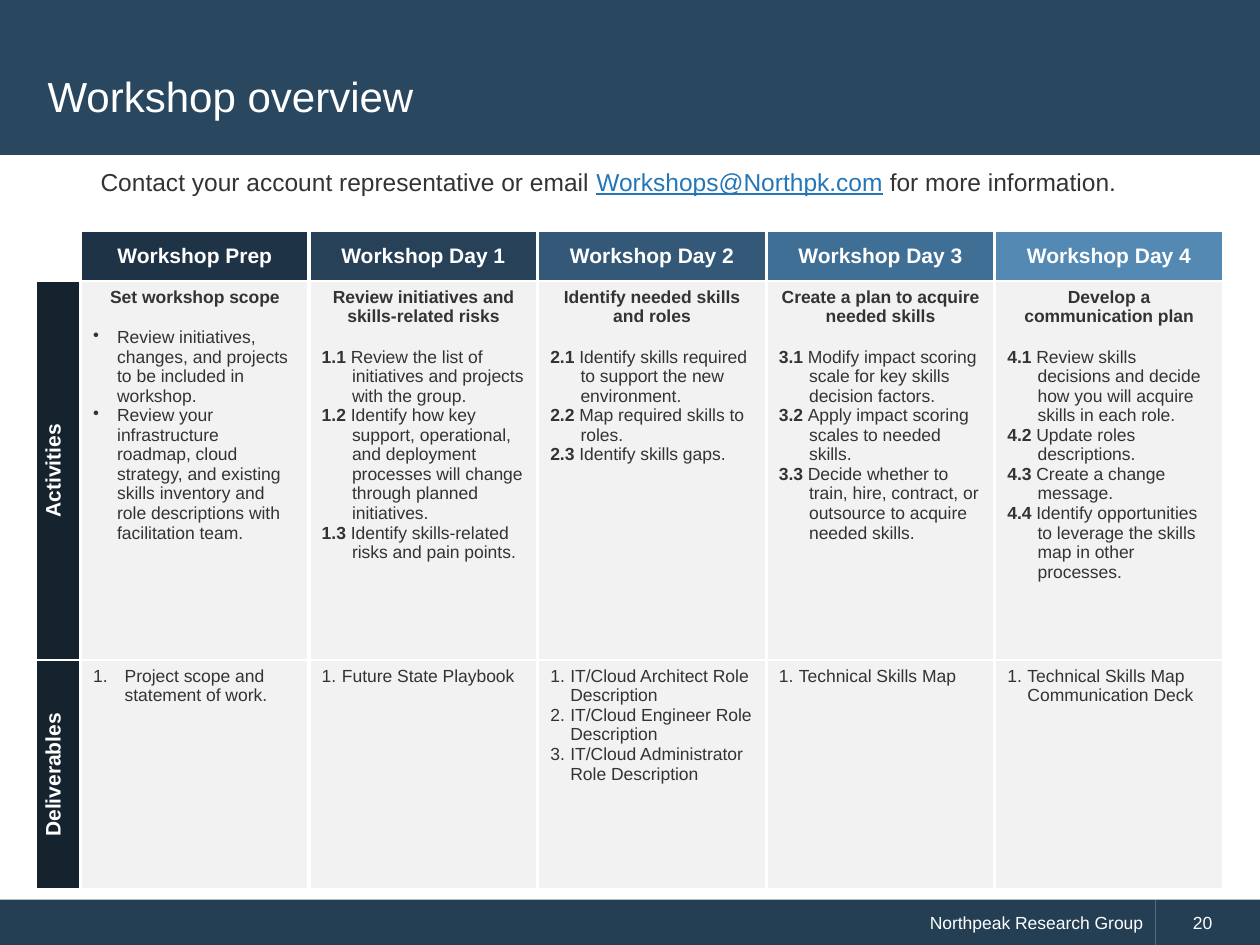
from collections import namedtuple
from dataclasses import dataclass

from lxml.etree import SubElement
from pptx import Presentation
from pptx.dml.color import RGBColor
from pptx.enum.shapes import MSO_SHAPE
from pptx.enum.text import MSO_ANCHOR, PP_ALIGN
from pptx.oxml.ns import qn
from pptx.util import Inches, Pt

Box = namedtuple("Box", "left top width height")


@dataclass(frozen=True)
class Theme:
    font: str = "Arial"
    white: str = "FFFFFF"
    ink: str = "333333"
    link: str = "2576B7"
    banner: str = "29475F"
    footer: str = "243F54"
    side: str = "15232F"
    body: str = "F2F2F2"
    days: tuple = ("1E3346", "264158", "345978", "406F96", "5489B4")
    title_size: int = 24
    contact_size: int = 14
    head_size: int = 12
    body_size: int = 10


THEME = Theme()
HEADING = {"size": Pt(THEME.head_size), "bold": True}

# Each stage: name, goal, activities (number, text), deliverables
STAGES = [
    ("Workshop Prep", "Set workshop scope", [
        ("", "Review initiatives, changes, and projects to be included in workshop."),
        ("", "Review your infrastructure roadmap, cloud strategy, and existing skills "
             "inventory and role descriptions with facilitation team.")],
     ["Project scope and statement of work."]),
    ("Workshop Day 1", "Review initiatives and skills-related risks", [
        ("1.1", "Review the list of initiatives and projects with the group."),
        ("1.2", "Identify how key support, operational, and deployment processes "
                "will change through planned initiatives."),
        ("1.3", "Identify skills-related risks and pain points.")],
     ["Future State Playbook"]),
    ("Workshop Day 2", "Identify needed skills and roles", [
        ("2.1", "Identify skills required to support the new environment."),
        ("2.2", "Map required skills to roles."),
        ("2.3", "Identify skills gaps.")],
     ["IT/Cloud Architect Role Description", "IT/Cloud Engineer Role Description",
      "IT/Cloud Administrator Role Description"]),
    ("Workshop Day 3", "Create a plan to acquire needed skills", [
        ("3.1", "Modify impact scoring scale for key skills decision factors."),
        ("3.2", "Apply impact scoring scales to needed skills."),
        ("3.3", "Decide whether to train, hire, contract, or outsource to acquire "
                "needed skills.")],
     ["Technical Skills Map"]),
    ("Workshop Day 4", "Develop a communication plan", [
        ("4.1", "Review skills decisions and decide how you will acquire skills in each role."),
        ("4.2", "Update roles descriptions."),
        ("4.3", "Create a change message."),
        ("4.4", "Identify opportunities to leverage the skills map in other processes.")],
     ["Technical Skills Map Communication Deck"]),
]


def add_run(paragraph, text, color=THEME.ink, **formats):
    run = paragraph.add_run()
    run.text = text
    run.font.color.rgb = RGBColor.from_string(color)
    defaults = {"name": THEME.font, "size": Pt(THEME.body_size), "bold": False}
    for attribute, value in {**defaults, **formats}.items():
        setattr(run.font, attribute, value)


def add_paragraph(frame, **formats):
    first = frame.paragraphs[0]
    paragraph = frame.add_paragraph() if first.runs else first
    for attribute, value in formats.items():
        setattr(paragraph, attribute, value)
    return paragraph


def indent(paragraph, left, hanging=0, bullet=None, **bullet_format):
    properties = paragraph._p.get_or_add_pPr()
    properties.set("marL", str(Inches(left)))
    properties.set("indent", str(-Inches(hanging)))
    if bullet:
        SubElement(properties, qn(bullet), **bullet_format)


def add_bar(slide, box, color):
    bar = slide.shapes.add_shape(MSO_SHAPE.RECTANGLE, *map(Inches, box))
    bar.shadow.inherit = False
    bar.fill.solid()
    bar.fill.fore_color.rgb = RGBColor.from_string(color)
    bar.line.fill.background()
    bar.text_frame.vertical_anchor = MSO_ANCHOR.MIDDLE
    return bar


def add_text(slide, box):
    frame = slide.shapes.add_textbox(*map(Inches, box)).text_frame
    frame.word_wrap = True
    frame.vertical_anchor = MSO_ANCHOR.MIDDLE
    return add_paragraph(frame)


def add_footer(slide, box):
    number_width = 0.83
    split = box.width - number_width
    owner = add_bar(slide, box._replace(width=split), THEME.footer)
    paragraph = add_paragraph(owner.text_frame, alignment=PP_ALIGN.RIGHT)
    add_run(paragraph, "Northpeak Research Group", THEME.white)
    number = add_bar(slide, box._replace(left=box.left + split, width=number_width),
                     THEME.footer)
    paragraph = add_paragraph(number.text_frame, alignment=PP_ALIGN.LEFT)
    indent(paragraph, 0.2)
    add_run(paragraph, "20", THEME.white)


def add_banner(slide, box):
    add_bar(slide, box, THEME.banner)
    title = add_text(slide, Box(box.left + 0.28, box.top + 0.28, 9.43, 0.96))
    add_run(title, "Workshop overview", THEME.white, size=Pt(THEME.title_size))


def add_contact(slide, box):
    contact = add_text(slide, box)
    size = Pt(THEME.contact_size)
    add_run(contact, "Contact your account representative or email ", size=size)
    add_run(contact, "Workshops@Northpk.com", THEME.link, size=size, underline=True)
    add_run(contact, " for more information.", size=size)


def style_cell(cell, color=None):
    properties = cell._tc.get_or_add_tcPr()
    for side, points in (("L", 2.25), ("R", 2.25), ("T", 1.5), ("B", 1.5)):
        border = SubElement(properties, qn(f"a:ln{side}"), w=str(Pt(points)))
        SubElement(SubElement(border, qn("a:solidFill")), qn("a:srgbClr"), val=THEME.white)
    if color:
        cell.fill.solid()
        cell.fill.fore_color.rgb = RGBColor.from_string(color)
    else:
        cell.fill.background()


def fill_side(cell, label):
    style_cell(cell, THEME.side)
    cell.vertical_anchor = MSO_ANCHOR.MIDDLE
    cell._tc.get_or_add_tcPr().set("vert", "vert270")
    paragraph = add_paragraph(cell.text_frame, alignment=PP_ALIGN.CENTER, space_after=Pt(5))
    add_run(paragraph, label, THEME.white, **HEADING)


def fill_stage(cells, color, name, goal, activities, deliverables):
    head, activity_cell, deliverable_cell = cells
    for cell, fill in zip(cells, (color, THEME.body, THEME.body)):
        style_cell(cell, fill)
    head.vertical_anchor = MSO_ANCHOR.MIDDLE
    add_run(add_paragraph(head.text_frame, alignment=PP_ALIGN.CENTER),
            name, THEME.white, **HEADING)

    add_run(add_paragraph(activity_cell.text_frame, alignment=PP_ALIGN.CENTER,
                          space_after=Pt(12)), goal, bold=True)
    for number, activity in activities:
        paragraph = add_paragraph(activity_cell.text_frame)
        if number:
            indent(paragraph, 0.24, 0.24)
            add_run(paragraph, f"{number} ", bold=True)
        else:
            indent(paragraph, 0.19, 0.19, "a:buChar", char="•")
        add_run(paragraph, activity)

    hanging = 0.16 if activities[0][0] else 0.25
    for deliverable in deliverables:
        paragraph = add_paragraph(deliverable_cell.text_frame)
        indent(paragraph, hanging, hanging, "a:buAutoNum", type="arabicPeriod")
        add_run(paragraph, deliverable)


def add_schedule(slide, box):
    heights = (0.31, 3.01, box.height - 3.32)
    side_width = 0.36
    table = slide.shapes.add_table(len(heights), len(STAGES) + 1, *map(Inches, box)).table
    for row, height in zip(table.rows, heights):
        row.height = Inches(height)
    for column in table.columns:
        column.width = Inches((box.width - side_width) / len(STAGES))
    table.columns[0].width = Inches(side_width)

    style_cell(table.cell(0, 0))
    for row, label in enumerate(("Activities", "Deliverables"), start=1):
        fill_side(table.cell(row, 0), label)
    for column, (color, stage) in enumerate(zip(THEME.days, STAGES), start=1):
        fill_stage([table.cell(row, column) for row in range(len(heights))], color, *stage)


def main():
    deck = Presentation()
    deck.slide_width, deck.slide_height = Inches(10), Inches(7.5)
    slide = deck.slides.add_slide(deck.slide_layouts[6])
    add_footer(slide, Box(0, 7.14, 10, 0.37))
    add_banner(slide, Box(0, 0, 10, 1.23))
    add_contact(slide, Box(0.7, 1.25, 8.97, 0.38))
    add_schedule(slide, Box(0.28, 1.83, 9.43, 5.14))
    deck.save("out.pptx")


if __name__ == "__main__":
    main()
